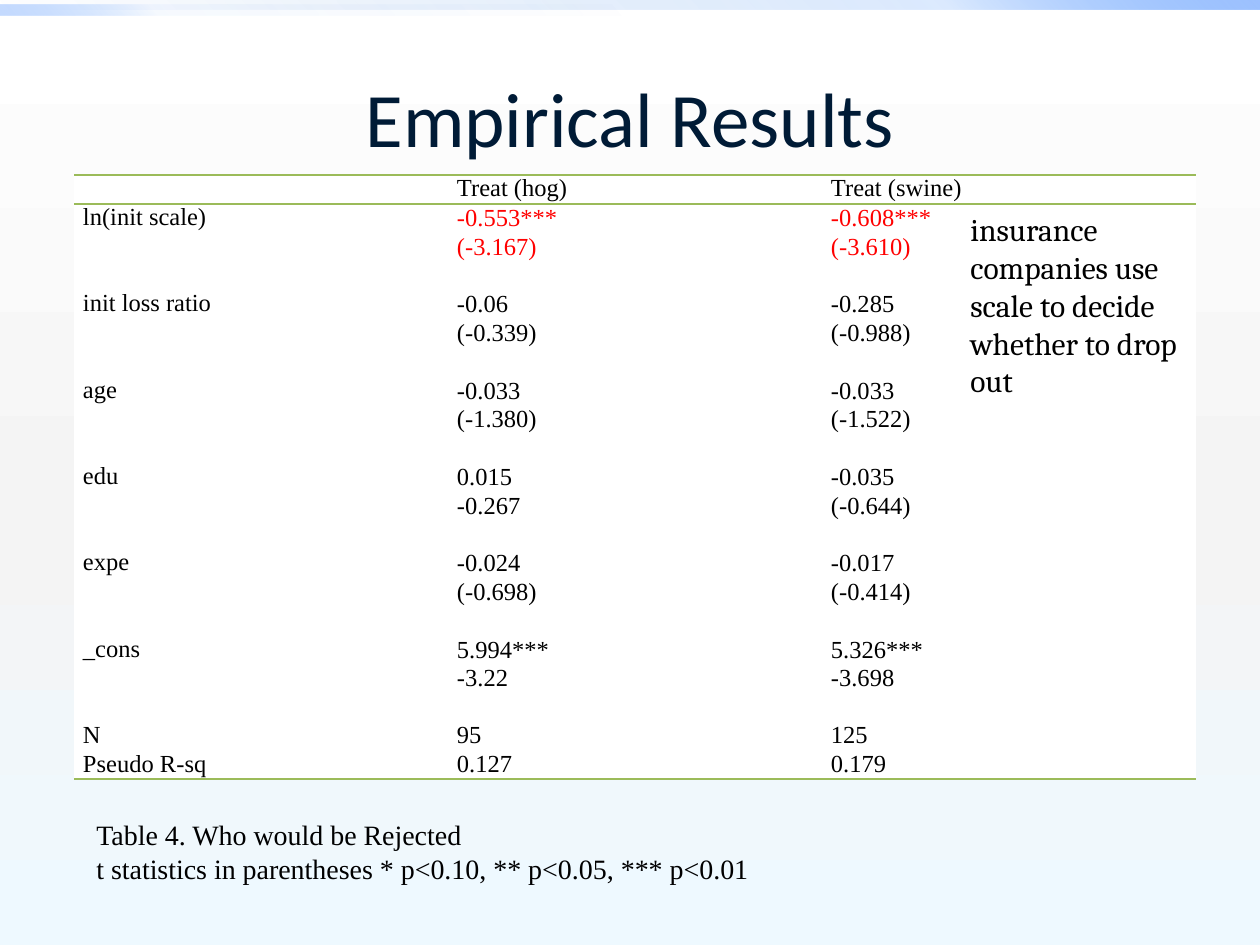
from lxml.etree import SubElement
from pptx import Presentation
from pptx.dml.color import RGBColor
from pptx.enum.shapes import MSO_SHAPE
from pptx.enum.text import MSO_ANCHOR, MSO_AUTO_SIZE, PP_ALIGN
from pptx.oxml import parse_xml
from pptx.oxml.ns import nsdecls, qn
from pptx.util import Pt

PIXEL = 914400 // 126
NAVY = RGBColor(0x00, 0x1B, 0x36)
BLACK = RGBColor(0x00, 0x00, 0x00)
WHITE = RGBColor(0xFF, 0xFF, 0xFF)
RED = RGBColor(0xFF, 0x00, 0x00)
GREEN = RGBColor(0x9B, 0xBB, 0x59)
PALE_GRAY = RGBColor(0xF4, 0xF4, 0xF4)
PALE_BLUE = RGBColor(0xEE, 0xF9, 0xFF)
DEEP_BLUE = RGBColor(0x00, 0x58, 0xB7)
BRIGHT_BLUE = RGBColor(0x4F, 0x95, 0xFF)
LIGHT_BLUE = RGBColor(0x9E, 0xC2, 0xFF)

SERIF = "Times New Roman"
PLAIN_TABLE_STYLE = "{2D5ABB26-0587-4C30-8999-92F81FD0307C}"
COLUMN_WIDTH = 374
TABLE_HEIGHT = 605

HEADER = ("", "Treat (hog)", "Treat (swine)")
ESTIMATES = [
    ("ln(init scale)", ("-0.553***", "-0.608***"), ("(-3.167)", "(-3.610)")),
    ("init loss ratio", ("-0.06", "-0.285"), ("(-0.339)", "(-0.988)")),
    ("age", ("-0.033", "-0.033"), ("(-1.380)", "(-1.522)")),
    ("edu", ("0.015", "-0.035"), ("-0.267", "(-0.644)")),
    ("expe", ("-0.024", "-0.017"), ("(-0.698)", "(-0.414)")),
    ("_cons", ("5.994***", "5.326***"), ("-3.22", "-3.698")),
]
SUMMARY = [("N", "95", "125"), ("Pseudo R-sq", "0.127", "0.179")]
HIGHLIGHTED_ROWS = (1, 2)


def px(*lengths):
    return [int(length * PIXEL) for length in lengths]


def set_gradient(properties, stops, angle):
    """Replace the fill with stops of (position %, colour, opacity %), angle clockwise."""
    stop_xml = "".join(
        f'<a:gs pos="{position * 1000}"><a:srgbClr val="{color}">'
        f'<a:alpha val="{opacity * 1000}"/></a:srgbClr></a:gs>'
        for position, color, opacity in stops)
    gradient = parse_xml(
        f'<a:gradFill {nsdecls("a")} rotWithShape="1"><a:gsLst>{stop_xml}</a:gsLst>'
        f'<a:lin ang="{angle * 60000}" scaled="0"/></a:gradFill>')
    properties.replace(properties.find(qn("a:solidFill")), gradient)


def set_background(slide):
    fill = slide.background.fill
    fill.solid()
    fill.fore_color.rgb = WHITE
    set_gradient(slide.background._cSld.bg.bgPr,
                 [(0, WHITE, 100), (55, PALE_GRAY, 100), (100, PALE_BLUE, 100)], 90)


def add_top_bar(slide, top, width, opacities, angle):
    bar = slide.shapes.add_shape(MSO_SHAPE.RECTANGLE, *px(0, top, width, 10))
    bar.shadow.inherit = False
    bar.line.fill.background()
    bar.fill.solid()
    colors = (DEEP_BLUE, BRIGHT_BLUE, LIGHT_BLUE)
    set_gradient(bar._element.spPr, list(zip((0, 75, 100), colors, opacities)), angle)


def add_run(paragraph, text, font_name, size, color=BLACK):
    run = paragraph.add_run()
    run.text = text
    run.font.name = font_name
    run.font.size = Pt(size)
    run.font.color.rgb = color


def format_title(slide, text):
    title = slide.shapes.title
    title.left, title.top, title.width, title.height = px(63, 38, 1134, 158)
    title.text_frame.vertical_anchor = MSO_ANCHOR.MIDDLE
    paragraph = title.text_frame.paragraphs[0]
    paragraph.alignment = PP_ALIGN.CENTER
    add_run(paragraph, text, "Calibri", 44, NAVY)


def add_text(slide, box, lines, font_name, size, anchor=MSO_ANCHOR.TOP):
    frame = slide.shapes.add_textbox(*px(*box)).text_frame
    frame.word_wrap = True
    frame.auto_size = MSO_AUTO_SIZE.SHAPE_TO_FIT_TEXT
    frame.vertical_anchor = anchor
    for index, line in enumerate(lines):
        paragraph = frame.add_paragraph() if index else frame.paragraphs[0]
        add_run(paragraph, line, font_name, size)


def set_borders(cell, ruled_sides):
    """Rule the named sides and state that the others have no line."""
    properties = cell._tc.get_or_add_tcPr()
    for side in "LRTB":
        line = SubElement(properties, qn(f"a:ln{side}"), w=str(Pt(1)))
        if side in ruled_sides:
            fill = SubElement(line, qn("a:solidFill"))
            SubElement(fill, qn("a:srgbClr"), val=str(GREEN))
        else:
            SubElement(line, qn("a:noFill"))


def format_cell(cell, text, color, alignment, anchor, ruled_sides):
    set_borders(cell, ruled_sides)
    cell.fill.solid()
    cell.fill.fore_color.rgb = WHITE
    cell.margin_left, cell.margin_right, cell.margin_top, cell.margin_bottom = px(9, 9, 0, 0)
    cell.vertical_anchor = anchor
    paragraph = cell.text_frame.paragraphs[0]
    if text:
        paragraph.alignment = alignment
        add_run(paragraph, text, SERIF, 14, color)
    else:
        end_properties = SubElement(paragraph._p, qn("a:endParaRPr"), sz="1400")
        SubElement(end_properties, qn("a:latin"), typeface=SERIF)


def regression_rows():
    rows = [HEADER]
    for label, coefficients, statistics in ESTIMATES:
        rows += [(label, *coefficients), ("", *statistics), ("", "", "")]
    return rows + SUMMARY


def add_regression_table(slide):
    rows = regression_rows()
    frame = slide.shapes.add_table(
        len(rows), len(HEADER), *px(74, 175, COLUMN_WIDTH * len(HEADER), TABLE_HEIGHT))
    table = frame.table
    table.first_row = table.horz_banding = False
    table._tbl.tblPr.find(qn("a:tableStyleId")).text = PLAIN_TABLE_STYLE
    for column in table.columns:
        column.width, = px(COLUMN_WIDTH)

    ruled_sides = {0: "TB", 1: "T", len(rows) - 1: "B"}
    summary_start = len(rows) - len(SUMMARY)
    for row_index, values in enumerate(rows):
        table.rows[row_index].height, = px(TABLE_HEIGHT / len(rows))
        for column_index, text in enumerate(values):
            is_label = column_index == 0
            is_estimate = not is_label and 0 < row_index < summary_start
            highlighted = is_estimate and row_index in HIGHLIGHTED_ROWS
            format_cell(
                table.cell(row_index, column_index), text,
                RED if highlighted else BLACK,
                PP_ALIGN.JUSTIFY if is_label else PP_ALIGN.LEFT,
                MSO_ANCHOR.MIDDLE if is_estimate else MSO_ANCHOR.TOP,
                ruled_sides.get(row_index, ""))


def main():
    presentation = Presentation()
    presentation.slide_width, presentation.slide_height = px(1260, 945)
    slide = presentation.slides.add_slide(presentation.slide_layouts[5])
    set_background(slide)
    add_top_bar(slide, 0, 1260, (0, 20, 100), 315)
    add_top_bar(slide, 5, 630, (0, 5, 60), 135)
    format_title(slide, "Empirical Results")
    add_regression_table(slide)
    add_text(slide, (84, 811, 1101, 81),
             ["Table 4. Who would be Rejected",
              "t statistics in parentheses * p<0.10, ** p<0.05, *** p<0.01"],
             SERIF, 16, MSO_ANCHOR.MIDDLE)
    add_text(slide, (958, 204, 238, 204),
             ["insurance companies use scale to decide whether to drop out"],
             "Cambria", 18)
    presentation.save("out.pptx")


if __name__ == "__main__":
    main()
